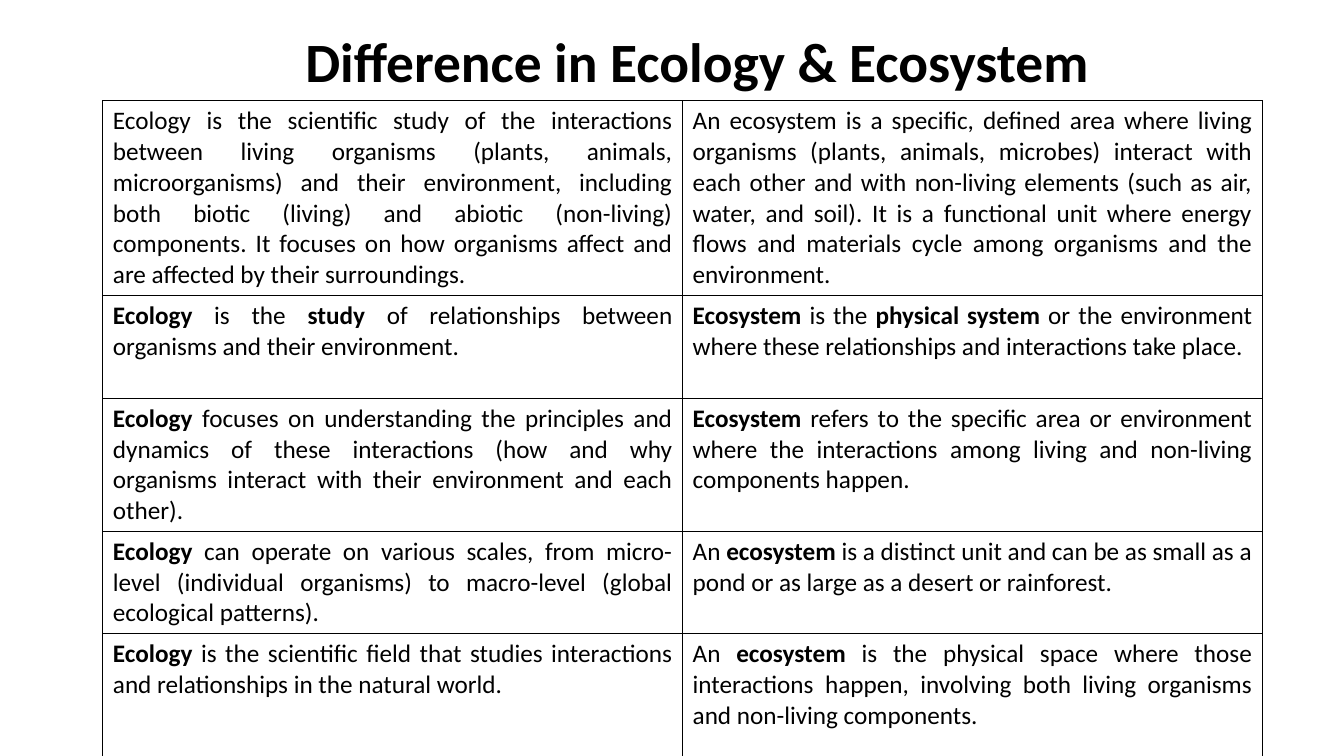
from dataclasses import dataclass

from lxml.etree import SubElement
from pptx import Presentation
from pptx.dml.color import RGBColor
from pptx.enum.text import MSO_ANCHOR, MSO_AUTO_SIZE, PP_ALIGN
from pptx.oxml.ns import qn
from pptx.util import Inches, Pt


@dataclass(frozen=True)
class Theme:
    font: str = "Calibri"
    ink: str = "000000"
    title_size: float = 39.6
    body_size: float = 18
    border_width: float = 1


THEME = Theme()

TITLE = "Difference in Ecology & Ecosystem"

# Ecology on the left, ecosystem on the right; ** encloses bold words
COMPARISON = [
    ("Ecology is the scientific study of the interactions between living organisms "
     "(plants, animals, microorganisms) and their environment, including both biotic "
     "(living) and abiotic (non-living) components. It focuses on how organisms affect "
     "and are affected by their surroundings.",
     "An ecosystem is a specific, defined area where living organisms (plants, animals, "
     "microbes) interact with each other and with non-living elements (such as air, "
     "water, and soil). It is a functional unit where energy flows and materials cycle "
     "among organisms and the environment."),
    ("**Ecology** is the **study** of relationships between organisms and their "
     "environment.",
     "**Ecosystem** is the **physical system** or the environment where these "
     "relationships and interactions take place."),
    ("**Ecology** focuses on understanding the principles and dynamics of these "
     "interactions (how and why organisms interact with their environment and each "
     "other).",
     "**Ecosystem** refers to the specific area or environment where the interactions "
     "among living and non-living components happen."),
    ("**Ecology** can operate on various scales, from micro-level (individual "
     "organisms) to macro-level (global ecological patterns).",
     "An **ecosystem** is a distinct unit and can be as small as a pond or as large as "
     "a desert or rainforest."),
    ("**Ecology** is the scientific field that studies interactions and relationships "
     "in the natural world.",
     "An **ecosystem** is the physical space where those interactions happen, involving "
     "both living organisms and non-living components."),
]
ROW_HEIGHTS = [1.93, 1.02, 1.32, 1.01, 1.22]


def style_run(run, size, bold):
    run.font.name = THEME.font
    run.font.size = Pt(size)
    run.font.bold = bold
    run.font.color.rgb = RGBColor.from_string(THEME.ink)


def place_title(slide, left, top, width, height):
    title = slide.shapes.title
    title.left, title.top = Inches(left), Inches(top)
    title.width, title.height = Inches(width), Inches(height)
    frame = title.text_frame
    frame.text = TITLE
    frame.word_wrap = True
    frame.auto_size = MSO_AUTO_SIZE.NONE
    frame.vertical_anchor = MSO_ANCHOR.MIDDLE
    heading = frame.paragraphs[0]
    heading.alignment = PP_ALIGN.CENTER
    heading.line_spacing = 0.9
    style_run(heading.runs[0], THEME.title_size, True)


def draw_borders(cell):
    properties = cell._tc.get_or_add_tcPr()
    for side in ("lnL", "lnR", "lnT", "lnB"):
        line = SubElement(properties, qn(f"a:{side}"), w=str(Pt(THEME.border_width)))
        fill = SubElement(line, qn("a:solidFill"))
        SubElement(fill, qn("a:srgbClr"), val=THEME.ink)


def fill_cell(cell, statement):
    draw_borders(cell)
    cell.fill.background()
    paragraph = cell.text_frame.paragraphs[0]
    paragraph.alignment = PP_ALIGN.JUSTIFY
    for index, words in enumerate(statement.split("**")):
        if words:
            run = paragraph.add_run()
            run.text = words
            style_run(run, THEME.body_size, index % 2 == 1)


def place_comparison(slide, left, top, width, height):
    comparison = slide.shapes.add_table(
        len(COMPARISON), 2, Inches(left), Inches(top), Inches(width), Inches(height)
    ).table
    comparison.first_row = False
    comparison.horz_banding = False
    for row, row_height, statements in zip(comparison.rows, ROW_HEIGHTS, COMPARISON):
        row.height = Inches(row_height)
        for cell, statement in zip(row.cells, statements):
            fill_cell(cell, statement)


def main():
    deck = Presentation()
    deck.slide_width, deck.slide_height = Inches(13.33), Inches(7.5)
    slide = deck.slides.add_slide(deck.slide_layouts[5])
    place_title(slide, 1.41, 0.4, 11.01, 0.49)
    place_comparison(slide, 1.02, 1, 11.5, sum(ROW_HEIGHTS))
    deck.save("out.pptx")


if __name__ == "__main__":
    main()
